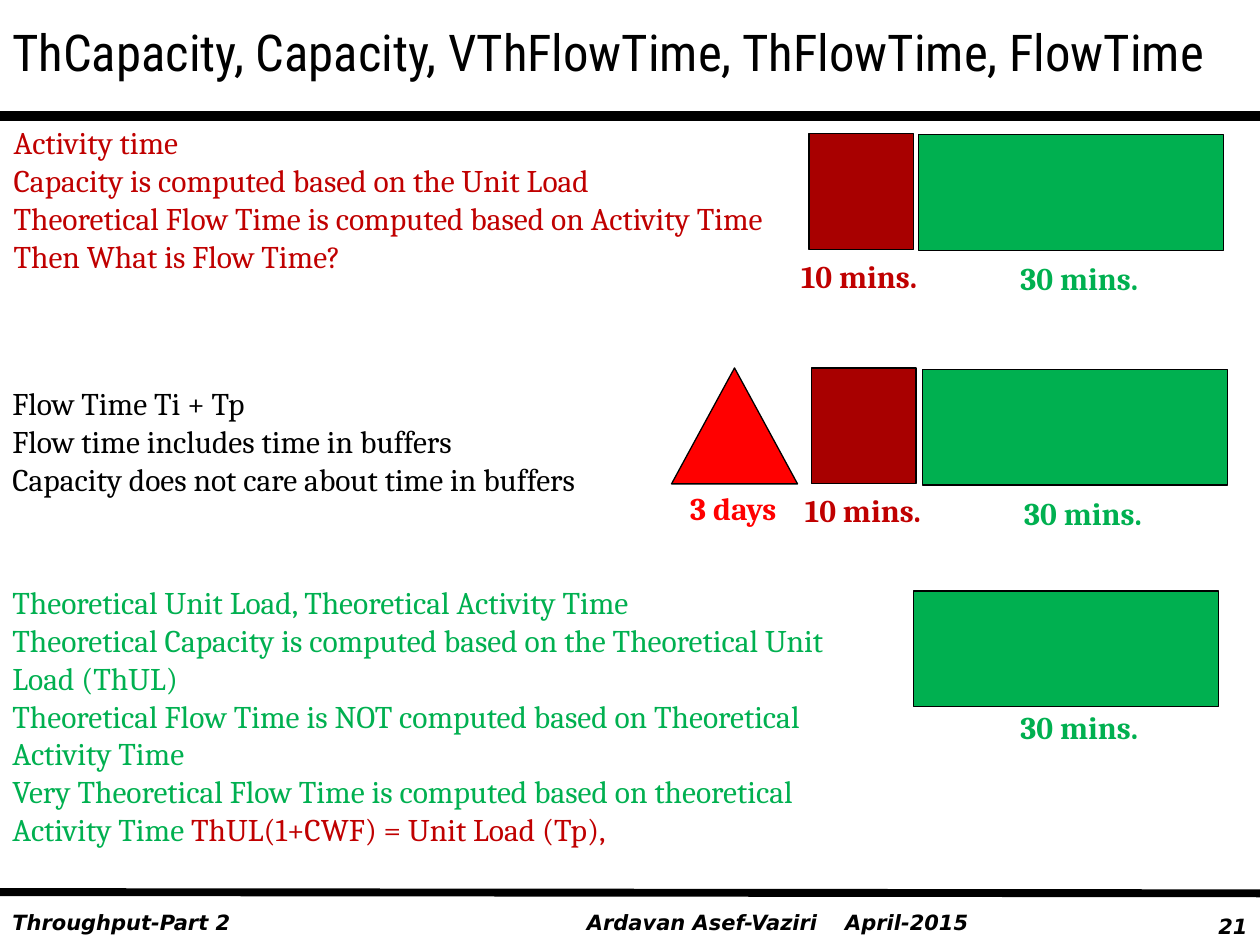
from lxml import etree
from pptx import Presentation
from pptx.dml.color import RGBColor
from pptx.enum.shapes import MSO_CONNECTOR, MSO_SHAPE
from pptx.enum.text import MSO_ANCHOR, PP_ALIGN
from pptx.oxml.ns import qn
from pptx.util import Inches, Pt

COLORS = {
    "black": "000000",
    "dark_red": "A80000",
    "text_red": "C00000",
    "red": "FF0000",
    "green": "00B050",
}


def rgb(name):
    return RGBColor.from_string(COLORS[name])


def add_text(paragraphs, x, y, w, h, color="black", size=18, font="Cambria",
             bold=False, italic=False, align=PP_ALIGN.LEFT, anchor=MSO_ANCHOR.TOP):
    """Each paragraph is a string or a list of (text, colour) runs."""
    tf = s.shapes.add_textbox(Inches(x), Inches(y), Inches(w), Inches(h)).text_frame
    tf.word_wrap = True
    tf.vertical_anchor = anchor
    for i, runs in enumerate(paragraphs):
        p = tf.paragraphs[0] if i == 0 else tf.add_paragraph()
        p.alignment = align
        for text, run_color in [(runs, color)] if isinstance(runs, str) else runs:
            r = p.add_run()
            r.text = text
            r.font.name, r.font.size = font, Pt(size)
            r.font.bold, r.font.italic = bold, italic
            r.font.color.rgb = rgb(run_color)


prs = Presentation()
prs.slide_width, prs.slide_height = Inches(10), Inches(7.5)
s = prs.slides.add_slide(prs.slide_layouts[6])

# Footer
footer = dict(size=12, font="DejaVu Sans", bold=True, italic=True)
add_text(["Throughput-Part 2"], 0, 7.17, 4.5, 0.3, **footer)
add_text(["Ardavan Asef-Vaziri"], 4.56, 7.17, 2.1, 0.3, **footer)
add_text(["April-2015"], 6.61, 7.17, 1.3, 0.3, **footer)
add_text(["21"], 9.25, 7.2, 0.75, 0.3, align=PP_ALIGN.RIGHT, **footer)

# Rules under the title and above the footer
for y1, y2, width in [(0.92, 0.92, 6), (7.08, 7.09, 4.5)]:
    line = s.shapes.add_connector(MSO_CONNECTOR.STRAIGHT, Inches(0), Inches(y1),
                                  Inches(10), Inches(y2))
    line.line.color.rgb = rgb("black")
    line.line.width = Pt(width)
    etree.SubElement(line._element.spPr, qn("a:effectLst"))

# Title
add_text(["ThCapacity, Capacity, VThFlowTime, ThFlowTime, FlowTime"],
         0, -0.06, 10, 0.94, size=29, font="Roboto Condensed",
         anchor=MSO_ANCHOR.MIDDLE)

# Explanations
add_text(["Activity time",
          "Capacity is computed based on the Unit Load",
          "Theoretical Flow Time is computed based on Activity Time",
          "Then What is Flow Time?"],
         0.01, 0.93, 6.25, 1.92, color="text_red")
add_text(["Flow Time Ti + Tp",
          "Flow time includes time in buffers",
          "Capacity does not care about time in buffers"],
         0, 3, 5.53, 1.01)
add_text(["Theoretical Unit Load, Theoretical Activity Time",
          "Theoretical Capacity is computed based on the Theoretical Unit Load (ThUL)",
          "Theoretical Flow Time is NOT computed based on Theoretical Activity Time",
          [("Very Theoretical Flow Time is computed based on theoretical Activity Time ",
            "green"),
           ("ThUL(1+CWF) = Unit Load (Tp),", "text_red")]],
         0, 4.58, 7.08, 2.22, color="green")

# Time blocks: kind, block left and top, label left and top
KINDS = {
    "wait": (MSO_SHAPE.ISOSCELES_TRIANGLE, 1, "red", "3 days", 0.93, "red"),
    "waste": (MSO_SHAPE.RECTANGLE, 0.83, "dark_red", "10 mins.", 1.17, "text_red"),
    "work": (MSO_SHAPE.RECTANGLE, 2.42, "green", "30 mins.", 1.17, "green"),
}
blocks = [
    ("waste", 6.42, 1.06, 6.26, 1.99),
    ("work", 7.29, 1.07, 8, 2.01),
    ("wait", 5.33, 2.92, 5.38, 3.83),
    ("waste", 6.44, 2.92, 6.29, 3.85),
    ("work", 7.32, 2.93, 8.03, 3.87),
    ("work", 7.25, 4.69, 8, 5.57),
]
for kind, x, y, label_x, label_y in blocks:
    shape, width, fill, label, label_w, label_color = KINDS[kind]
    sp = s.shapes.add_shape(shape, Inches(x), Inches(y), Inches(width), Inches(0.92))
    sp.shadow.inherit = False
    sp.fill.solid()
    sp.fill.fore_color.rgb = rgb(fill)
    sp.line.color.rgb = rgb("black")
    sp.line.width = Pt(0.75)
    add_text([label], label_x, label_y, label_w, 0.4, color=label_color, bold=True)

prs.save("out.pptx")
